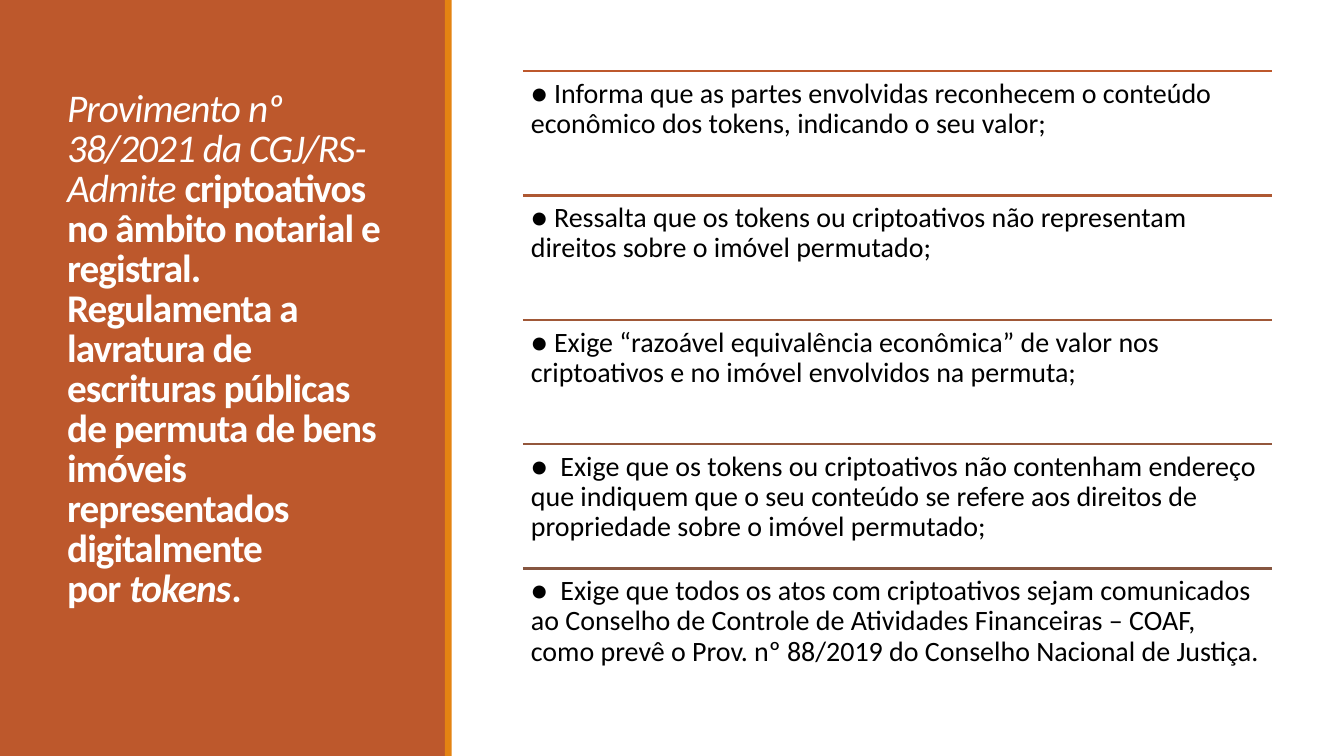
from copy import deepcopy
from lxml.etree import SubElement
from pptx import Presentation
from pptx.dml.color import RGBColor
from pptx.enum.shapes import MSO_CONNECTOR, MSO_SHAPE
from pptx.enum.text import MSO_ANCHOR, MSO_AUTO_SIZE, PP_ALIGN
from pptx.oxml.ns import qn
from pptx.util import Emu, Pt

SCALE = 4572  # EMU in one px, 200 px to the inch
HUES = {"rust": "BD582C", "gold": "E48312", "white": "FFFFFF", "black": "000000"}
RULES = ["BD582C", "AE5832", "A05837", "93573C", "865640"]

HEAD = [
    ("Provimento nº 38/2021 da CGJ/RS- Admite ", {"italic": True}),
    ("criptoativos no âmbito notarial e registral.\nRegulamenta a lavratura de "
     "escrituras públicas de permuta de bens imóveis representados digitalmente "
     "por\u00a0", {"bold": True}),
    ("tokens", {"bold": True, "italic": True}),
    (".\n", {"bold": True}),
]
ITEMS = [
    "● Informa que as partes envolvidas reconhecem o conteúdo econômico dos "
    "tokens, indicando o seu valor;",
    "● Ressalta que os tokens ou criptoativos não representam direitos sobre o "
    "imóvel permutado;",
    "● Exige “razoável equivalência econômica” de valor nos criptoativos e no "
    "imóvel envolvidos na permuta;",
    "●\u00a0 Exige que os tokens ou criptoativos não contenham endereço que indiquem "
    "que o seu conteúdo se refere aos direitos de propriedade sobre o imóvel "
    "permutado;",
    "●\u00a0 Exige que todos os atos com criptoativos sejam comunicados ao Conselho "
    "de Controle de Atividades Financeiras – COAF, como prevê o Prov. nº 88/2019 "
    "do Conselho Nacional de Justiça.",
]


def px(num):
    return Emu(num * SCALE)


def tint(code):
    return RGBColor.from_string(code)


def apply(obj, style):
    for name, value in style.items():
        setattr(obj, name, value)


class Deck:
    face = "Calibri"

    def __init__(self, wide, high):
        self.prs = Presentation()
        apply(self.prs, {"slide_width": px(wide), "slide_height": px(high)})
        self.slide = self.prs.slides.add_slide(self.prs.slide_layouts[5])
        self.shapes = self.slide.shapes

    def block(self, x, y, w, h, hue):
        box = self.shapes.add_shape(MSO_SHAPE.RECTANGLE, px(x), px(y), px(w), px(h))
        box.shadow.inherit = False
        box.fill.solid()
        box.fill.fore_color.rgb = tint(HUES[hue])
        box.line.fill.background()

    def run(self, para, text, size, hue, style):
        run = para.add_run()
        run.text = text
        apply(run.font, {"name": self.face, "size": Pt(size), **style})
        run.font.color.rgb = tint(HUES[hue])
        return run

    def title(self, x, y, w, h, parts, size):
        box = self.shapes.title
        apply(box, {"left": px(x), "top": px(y), "width": px(w), "height": px(h)})
        frame = box.text_frame
        apply(frame, {"word_wrap": True, "auto_size": MSO_AUTO_SIZE.NONE,
                      "vertical_anchor": MSO_ANCHOR.MIDDLE})
        para = frame.paragraphs[0]
        apply(para, {"alignment": PP_ALIGN.LEFT, "line_spacing": 0.85})
        for text, style in parts:
            for i, line in enumerate(text.split("\n")):
                if i:
                    # A break takes the format of the run before it
                    para.add_line_break()
                    para._p[-1].append(deepcopy(look))
                if line:
                    run = self.run(para, line, size, "white", style)
                    look = run.font._element
                    look.set("spc", "-50")
        SubElement(para._p, qn("a:endParaRPr"), sz=str(size * 100))
        # Bring the title in front of the band
        self.shapes._spTree.append(box._element)

    def rule(self, x, y, w, code):
        line = self.shapes.add_connector(
            MSO_CONNECTOR.STRAIGHT, px(x), px(y), px(x + w), px(y))
        line.line.color.rgb = tint(code)
        line.line.width = Pt(1.25)
        SubElement(line._element.spPr, qn("a:effectLst"))

    def text(self, x, y, w, h, words, size):
        frame = self.shapes.add_textbox(px(x), px(y), px(w), px(h)).text_frame
        sides = ("left", "top", "right", "bottom")
        apply(frame, {"word_wrap": True,
                      **{f"margin_{side}": px(12) for side in sides}})
        para = frame.paragraphs[0]
        apply(para, {"line_spacing": 0.9, "space_after": Pt(5)})
        self.run(para, words, size, "black", {})


def main():
    deck = Deck(2000, 1125)

    # Left panel with the title
    deck.block(0, 0, 664, 1125, "rust")
    deck.title(80, 84, 506, 946, HEAD, 21)
    deck.block(662, 0, 10, 1125, "gold")

    # Ruled list
    left, top, wide, step = 778, 106, 1115, 185
    for i, (words, code) in enumerate(zip(ITEMS, RULES)):
        y = top + i * step
        deck.rule(left, y, wide, code)
        deck.text(left, y, wide, step, words, 15)

    deck.prs.save("out.pptx")


if __name__ == "__main__":
    main()
